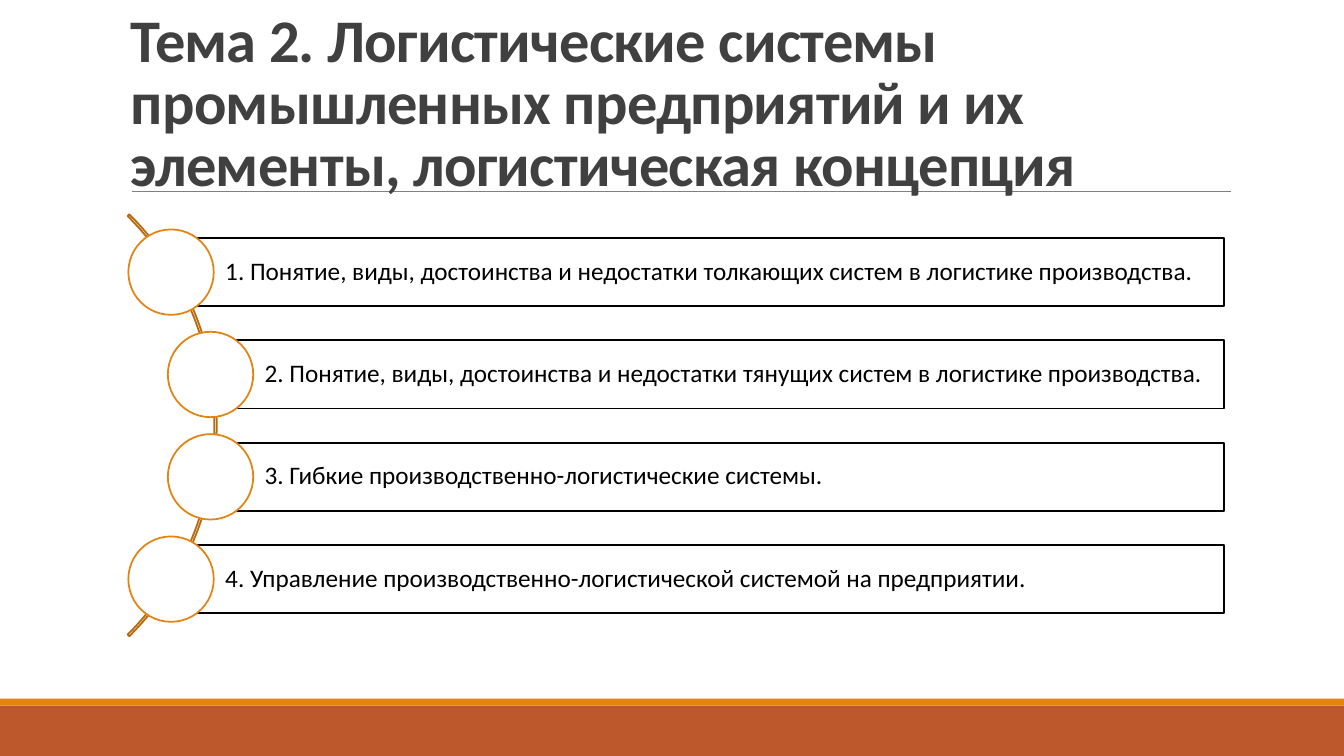
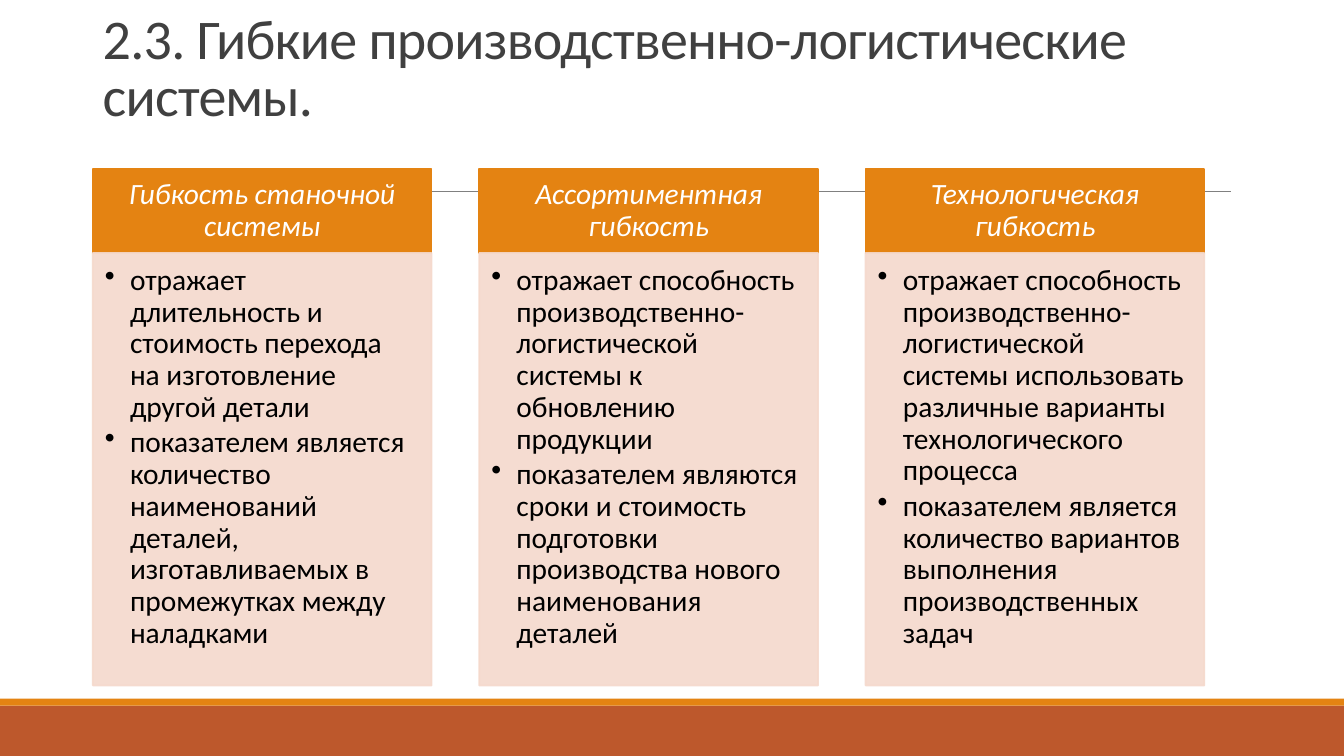
"""Builds two slides on production logistics systems: a topic list and three kinds of flexibility."""
import dataclasses

import pptx
import pptx.dml.color
import pptx.enum.shapes
import pptx.enum.text
import pptx.oxml
import pptx.oxml.ns
import pptx.util

Pt = pptx.util.Pt
Shape = pptx.enum.shapes.MSO_SHAPE
Anchor = pptx.enum.text.MSO_ANCHOR
Align = pptx.enum.text.PP_ALIGN
color = pptx.dml.color.RGBColor.from_string
namespace = pptx.oxml.ns.nsdecls("a")


@dataclasses.dataclass(frozen=True)
class Theme:
    font: str = "Calibri"
    white: str = "FFFFFF"
    black: str = "000000"
    title: str = "404040"
    rule: str = "808080"
    rust: str = "BD582C"
    orange: str = "E48312"
    arc: str = "B7690E"
    peach: str = "F5D9CC"
    topic_size: float = 18
    column_size: float = 21
    outline: float = 1.25


theme = Theme()


def add_box(slide, kind, place, fill=None, line=None):
    """Adds a preset shape without shadow."""
    shape = slide.shapes.add_shape(kind, *map(Pt, place))
    shape.shadow.inherit = False
    if fill:
        shape.fill.solid()
        shape.fill.fore_color.rgb = color(fill)
    else:
        shape.fill.background()
    if line:
        shape.line.color.rgb = color(line)
        shape.line.width = Pt(theme.outline)
    else:
        shape.line.fill.background()
    return shape


def write(shape, texts, font, ink, margins, anchor, **paragraph_format):
    """Fills a shape with paragraphs and returns them."""
    frame = shape.text_frame
    frame.word_wrap = True
    frame.vertical_anchor = anchor
    for side, margin in zip(("left", "top", "right", "bottom"), margins):
        setattr(frame, f"margin_{side}", Pt(margin))
    for index, text in enumerate(texts):
        paragraph = frame.add_paragraph() if index else frame.paragraphs[0]
        run = paragraph.add_run()
        run.text = text
        run.font.color.rgb = color(ink)
        for name, value in {"name": theme.font, **font}.items():
            setattr(run.font, name, value)
        for name, value in paragraph_format.items():
            setattr(paragraph, name, value)
    return frame.paragraphs


presentation = pptx.Presentation()
presentation.slide_width = Pt(960)
presentation.slide_height = Pt(540)

titles = [
    ("Тема 2. Логистические системы промышленных предприятий и их элементы, логистическая концепция",
     (86.4, 31, 846, 114.4), {"size": Pt(43.2), "bold": True}),
    ("2.3. Гибкие производственно-логистические системы.",
     (66.3, 28.8, 900, 66.2), {"size": Pt(40)}),
]
for title, place, font in titles:
    slide = presentation.slides.add_slide(presentation.slide_layouts[6])
    add_box(slide, Shape.RECTANGLE, (0, 504, 960, 36), theme.rust)
    add_box(slide, Shape.RECTANGLE, (0, 499, 960, 5), theme.orange)
    rule = slide.shapes.add_connector(
        pptx.enum.shapes.MSO_CONNECTOR.STRAIGHT, Pt(94.3), Pt(136.5), Pt(879.1), Pt(136.5))
    rule.line.color.rgb = color(theme.rule)
    rule.line.width = Pt(0.5)
    rule.element.spPr.append(pptx.oxml.parse_xml(f"<a:effectLst {namespace}/>"))
    title_box = slide.shapes.add_textbox(*map(Pt, place))
    for paragraph in write(title_box, [title], font, theme.title, (7.2, 3.6, 7.2, 3.6),
                           Anchor.BOTTOM, line_spacing=0.85):
        paragraph.runs[0].font._element.set("spc", "-50")

topics_slide, flexibility_slide = presentation.slides

arc = add_box(topics_slide, Shape.BLOCK_ARC, (-271.4, 90.7, 426.2, 426.2), line=theme.arc)
for index, value in enumerate((189, 27, 0.004)):
    arc.adjustments[index] = value

topics = [
    (122.2, "1. Понятие, виды, достоинства и недостатки толкающих систем в логистике производства."),
    (150.4, "2. Понятие, виды, достоинства и недостатки тянущих систем в логистике производства."),
    (150.4, "3. Гибкие производственно-логистические системы."),
    (122.2, "4. Управление производственно-логистической системой на предприятии."),
]
bar_height, circle_size, bars_right = 48.8, 61, 874.2
for index, (left, topic) in enumerate(topics):
    top = 170 + 73.1 * index
    bar = add_box(topics_slide, Shape.RECTANGLE, (left, top, bars_right - left, bar_height),
                  theme.white, theme.black)
    write(bar, [topic], {"size": Pt(theme.topic_size)}, theme.black, (38.7, 3.6, 3.6, 3.6),
          Anchor.MIDDLE, alignment=Align.LEFT, line_spacing=0.9)
    add_box(topics_slide, Shape.OVAL,
            (left - circle_size / 2, top + (bar_height - circle_size) / 2, circle_size, circle_size),
            theme.white, theme.orange)

columns = [
    ("Гибкость станочной системы",
     ["отражает длительность и стоимость перехода на изготовление другой детали",
      "показателем является количество наименований деталей, изготавливаемых в промежутках между наладками"]),
    ("Ассортиментная гибкость",
     ["отражает способность производственно-логистической системы к обновлению продукции",
      "показателем являются сроки и стоимость подготовки производства нового наименования деталей"]),
    ("Технологическая гибкость",
     ["отражает способность производственно-логистической системы использовать различные варианты технологического процесса",
      "показателем является количество вариантов выполнения производственных задач"]),
]
column_width, header_top, header_height = 242, 120.8, 59.9
for index, (heading, points) in enumerate(columns):
    left = 66.3 + 276 * index
    header = add_box(flexibility_slide, Shape.RECTANGLE,
                     (left, header_top, column_width, header_height), theme.orange, theme.orange)
    write(header, [heading], {"size": Pt(theme.column_size), "italic": True}, theme.white,
          (11.5, 6.5, 11.5, 6.5), Anchor.MIDDLE, alignment=Align.CENTER, line_spacing=0.9)
    body = add_box(flexibility_slide, Shape.RECTANGLE,
                   (left, header_top + header_height, column_width, 308.9), theme.peach, theme.peach)
    for tint in body.element.spPr.iter(pptx.oxml.ns.qn("a:srgbClr")):
        tint.append(pptx.oxml.parse_xml(f'<a:alpha {namespace} val="90000"/>'))
    for paragraph in write(body, points, {"size": Pt(theme.column_size)}, theme.black,
                           (8.6, 8.6, 11.5, 13), Anchor.TOP, alignment=Align.LEFT,
                           line_spacing=0.9, space_after=Pt(2.7)):
        properties = paragraph._p.get_or_add_pPr()
        properties.set("marL", str(Pt(18)))
        properties.set("indent", str(-Pt(18)))
        properties.append(pptx.oxml.parse_xml(f'<a:buChar {namespace} char="•"/>'))

presentation.save("out.pptx")
